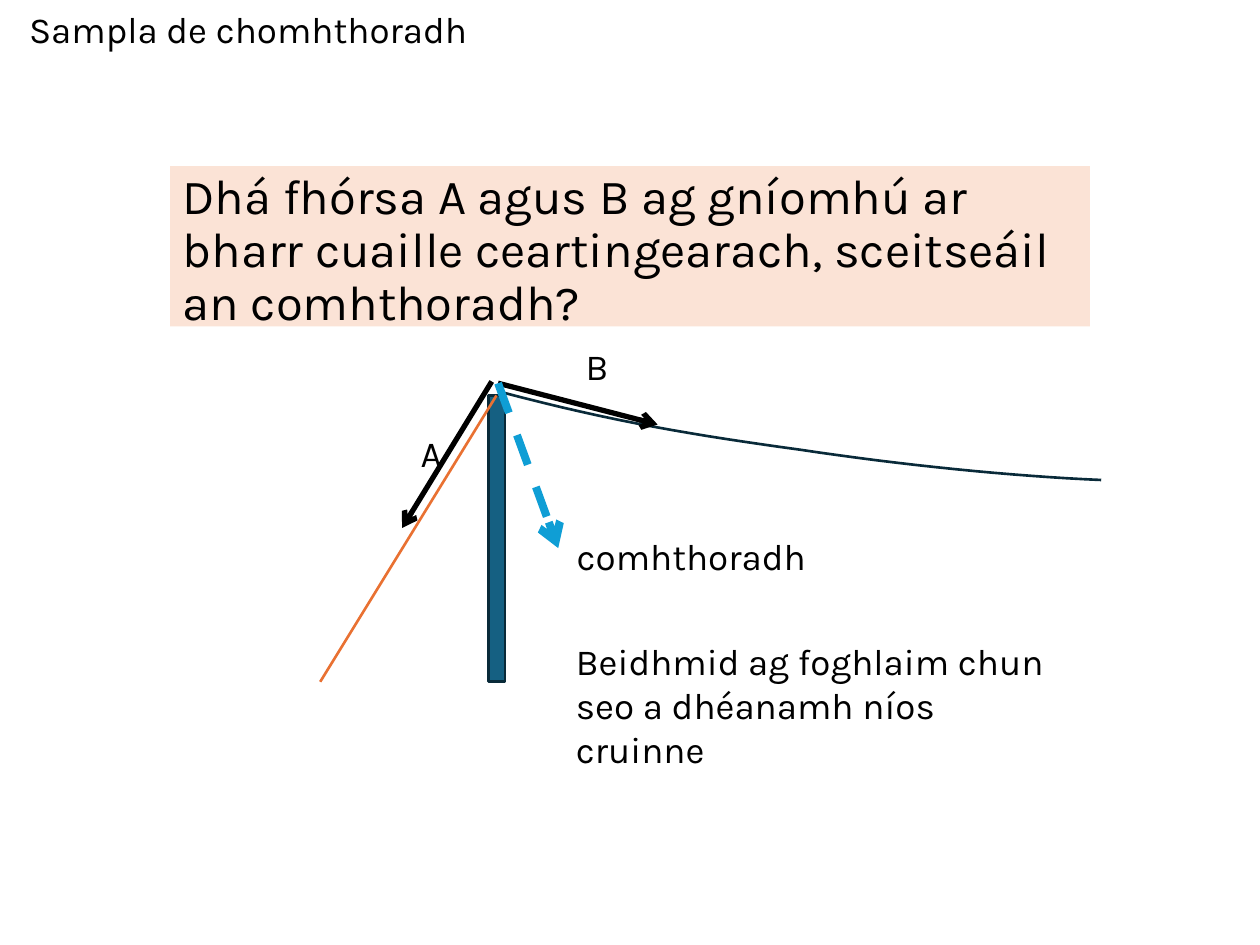
from dataclasses import dataclass

from lxml.etree import SubElement
from pptx import Presentation
from pptx.dml.color import RGBColor
from pptx.enum.dml import MSO_LINE
from pptx.enum.shapes import MSO_CONNECTOR, MSO_SHAPE
from pptx.enum.text import MSO_ANCHOR, MSO_AUTO_SIZE, PP_ALIGN
from pptx.oxml.ns import qn
from pptx.util import Pt


@dataclass(frozen=True)
class Theme:
    font: str = "Karla"
    text: str = "000000"
    panel: str = "FBE3D6"
    pole: str = "156082"
    outline: str = "092A39"
    stay: str = "E97132"
    resultant: str = "0F9ED5"
    label_size: float = 21
    question_size: float = 28
    thin: float = 1.5
    force: float = 3
    thick: float = 4.5


def rgb(value):
    return RGBColor.from_string(value)


def bezier(start, first, second, end, steps=16):
    for step in range(1, steps + 1):
        t = step / steps
        u = 1 - t
        yield tuple(
            u**3 * a + 3 * u**2 * t * b + 3 * u * t**2 * c + t**3 * d
            for a, b, c, d in zip(start, first, second, end)
        )


class SlideBuilder:
    def __init__(self, slide, theme):
        self.slide = slide
        self.theme = theme

    def _place(self, shape, box):
        shape.left, shape.top, shape.width, shape.height = map(Pt, box)

    def _write(self, shape, text, size):
        paragraph = shape.text_frame.paragraphs[0]
        paragraph.text = text
        paragraph.alignment = PP_ALIGN.LEFT
        paragraph.font.name = self.theme.font
        paragraph.font.size = Pt(size)
        paragraph.font.color.rgb = rgb(self.theme.text)
        return paragraph

    def _stroke(self, line, color, width):
        line.color.rgb = rgb(color)
        line.width = Pt(width)

    def title(self, text, box):
        heading = self.slide.shapes.title
        self._place(heading, box)
        heading.text_frame.vertical_anchor = MSO_ANCHOR.MIDDLE
        heading.text_frame.auto_size = MSO_AUTO_SIZE.NONE
        self._write(heading, text, self.theme.label_size).line_spacing = 0.9

    def question(self, text, box):
        panel = self.slide.placeholders[1]
        self._place(panel, box)
        panel.fill.solid()
        panel.fill.fore_color.rgb = rgb(self.theme.panel)
        panel.text_frame.auto_size = MSO_AUTO_SIZE.SHAPE_TO_FIT_TEXT
        paragraph = self._write(panel, text, self.theme.question_size)
        paragraph.line_spacing = 0.9
        paragraph.space_before = Pt(10)
        properties = paragraph._p.get_or_add_pPr()
        properties.set("marL", "0")
        properties.set("indent", "0")
        SubElement(properties, qn("a:buNone"))

    def label(self, text, box, wrap=True):
        caption = self.slide.shapes.add_textbox(*map(Pt, box))
        caption.text_frame.word_wrap = wrap
        caption.text_frame.auto_size = MSO_AUTO_SIZE.SHAPE_TO_FIT_TEXT
        self._write(caption, text, self.theme.label_size)

    def bar(self, box, fill, outline):
        post = self.slide.shapes.add_shape(MSO_SHAPE.RECTANGLE, *map(Pt, box))
        post.shadow.inherit = False
        post.fill.solid()
        post.fill.fore_color.rgb = rgb(fill)
        self._stroke(post.line, outline, self.theme.thin)

    def line(self, start, end, color, width, arrow=False, dash=None):
        connector = self.slide.shapes.add_connector(
            MSO_CONNECTOR.STRAIGHT, *map(Pt, (*start, *end))
        )
        self._stroke(connector.line, color, width)
        if dash:
            connector.line.dash_style = dash
        if arrow:
            SubElement(connector.line._get_or_add_ln(), qn("a:tailEnd"), type="arrow")
        SubElement(connector._element.spPr, qn("a:effectLst"))

    def curve(self, start, segments, color):
        points = []
        current = start
        for segment in segments:
            points.extend(bezier(current, *segment))
            current = segment[-1]
        builder = self.slide.shapes.build_freeform(*map(Pt, start))
        builder.add_line_segments([(Pt(x), Pt(y)) for x, y in points], close=False)
        wire = builder.convert_to_shape()
        wire.shadow.inherit = False
        wire.fill.background()
        self._stroke(wire.line, color, self.theme.thin)


def main():
    presentation = Presentation()
    presentation.slide_width = Pt(720)
    presentation.slide_height = Pt(540)
    theme = Theme()
    slide = presentation.slides.add_slide(presentation.slide_layouts[1])
    builder = SlideBuilder(slide, theme)

    builder.title("Sampla de chomhthoradh", (9.4, 0, 520.6, 36))
    builder.question(
        "Dhá fhórsa A agus B ag gníomhú ar bharr cuaille ceartingearach, "
        "sceitseáil an comhthoradh?",
        (97.2, 95, 525.6, 98.6),
    )

    builder.bar((279, 226, 9.6, 163.6), theme.pole, theme.outline)
    builder.line((183, 389.6), (283.7, 226), theme.stay, theme.thin)
    builder.curve(
        (285.8, 223.9),
        [
            ((350.6, 241.2), (399.6, 249.1), (457.2, 257)),
            ((514.8, 265.7), (578.9, 272.2), (629.3, 274.3)),
        ],
        theme.outline,
    )

    pole_top = (284.6, 219)
    builder.line((281, 218), (229.8, 301.7), theme.text, theme.force, arrow=True)
    builder.line(pole_top, (375.8, 242.6), theme.text, theme.force, arrow=True)
    builder.line(
        pole_top, (319, 313.2), theme.resultant, theme.thick,
        arrow=True, dash=MSO_LINE.DASH,
    )

    builder.label(
        "Beidhmid ag foghlaim chun seo a dhéanamh níos cruinne",
        (322, 361.4, 296.6, 58.3),
    )
    builder.label("comhthoradh", (322.5, 301.7, 172.8, 32.4))
    for force, left, top in (("A", 233.3, 242.6), ("B", 327.6, 193)):
        builder.label(force, (left, top, 27.4, 32.4), wrap=False)

    presentation.save("out.pptx")


if __name__ == "__main__":
    main()
